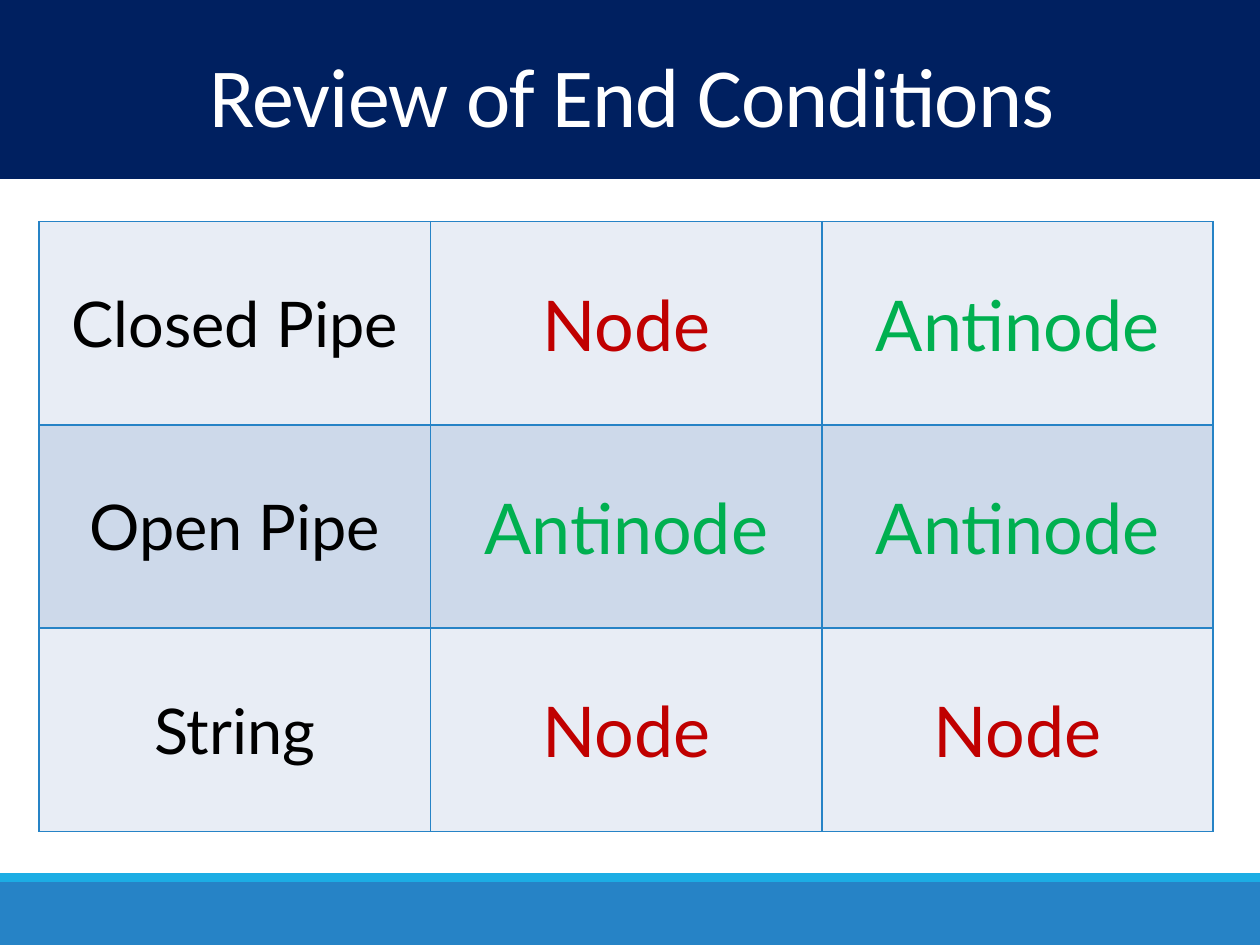
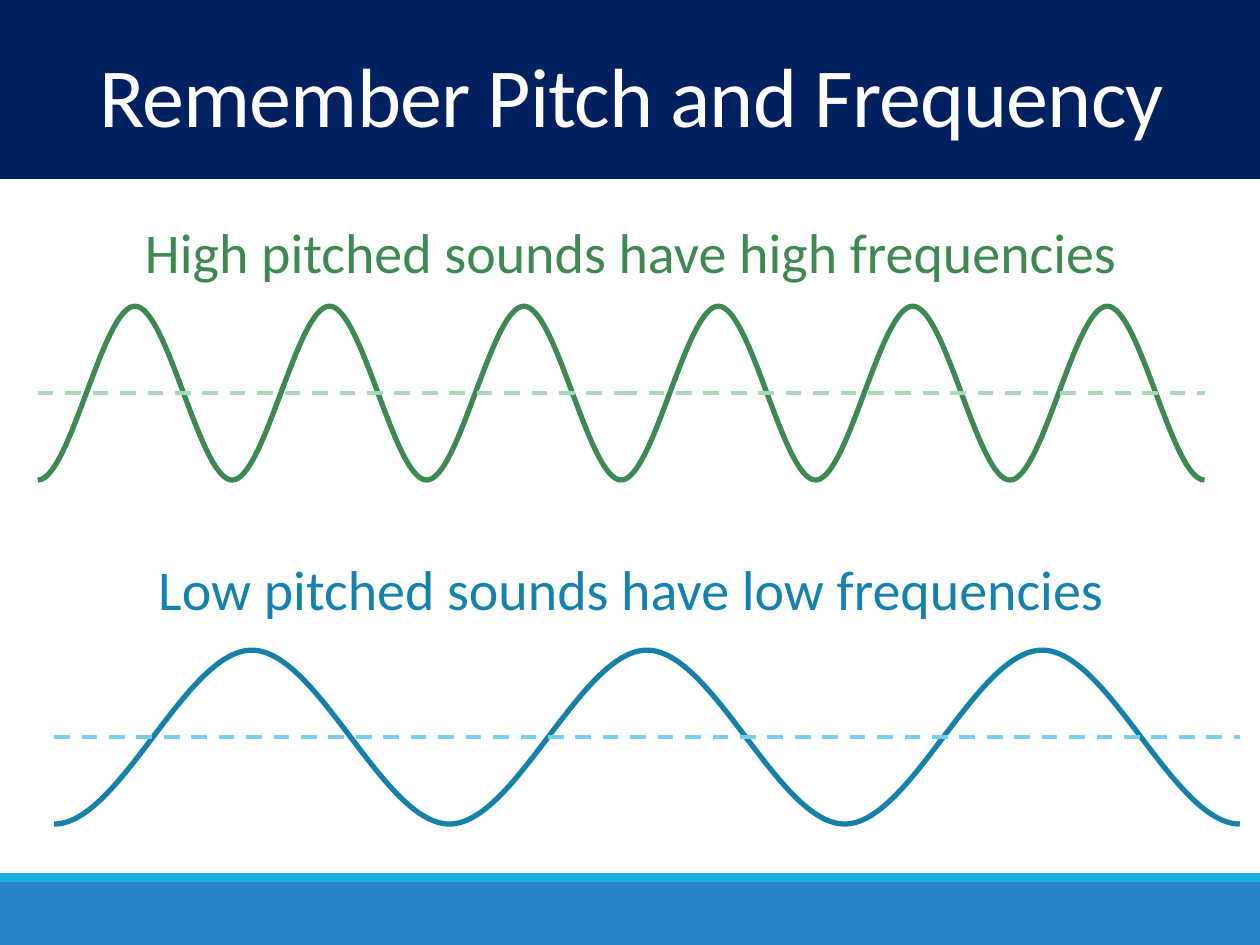
from lxml import etree
from pptx import Presentation
from pptx.dml.color import RGBColor
from pptx.enum.dml import MSO_LINE
from pptx.enum.shapes import MSO_CONNECTOR, MSO_SHAPE
from pptx.enum.text import MSO_ANCHOR, MSO_AUTO_SIZE, PP_ALIGN
from pptx.oxml.ns import qn
from pptx.util import Inches, Pt

RECT = MSO_SHAPE.RECTANGLE
STRAIGHT = MSO_CONNECTOR.STRAIGHT
DASH = MSO_LINE.DASH
CENTER = PP_ALIGN.CENTER
MIDDLE = MSO_ANCHOR.MIDDLE
FIT_SHAPE = MSO_AUTO_SIZE.SHAPE_TO_FIT_TEXT

WHITE = RGBColor(0xFF, 0xFF, 0xFF)
BLACK = RGBColor(0x00, 0x00, 0x00)
NAVY = RGBColor(0x00, 0x20, 0x60)
BLUE = RGBColor(0x26, 0x83, 0xC6)
SKY = RGBColor(0x1C, 0xAD, 0xE4)
ROW_FILLS = (RGBColor(0xE8, 0xED, 0xF5), RGBColor(0xCD, 0xD9, 0xEA))
RED = RGBColor(0xC0, 0x00, 0x00)
GREEN = RGBColor(0x00, 0xB0, 0x50)
HIGH = RGBColor(0x3E, 0x88, 0x53)
HIGH_AXIS = RGBColor(0xA9, 0xD8, 0xB7)
LOW_TEXT = RGBColor(0x14, 0x82, 0xAC)
LOW = RGBColor(0x15, 0x80, 0xA9)
LOW_AXIS = RGBColor(0x77, 0xCE, 0xEF)

SLIDE_W, SLIDE_H = 10, 7.5
TITLE_H, FOOTER_H, STRIPE_H = 1.42, 0.5, 0.07
HEADING, BODY = "Calibri", "Lato"

# Table grid
TABLE_X, TABLE_Y = 0.31, 1.76
COL_W, ROW_H = 9.32 / 3, 4.84 / 3
END_COLOURS = {"Node": RED, "Antinode": GREEN}
END_WIDTHS = {"Node": 1.57, "Antinode": 2.48}
END_H = 0.77
CONDITIONS = (
    ("Closed Pipe", "Node", "Antinode"),
    ("Open Pipe", "Antinode", "Antinode"),
    ("String", "Node", "Node"),
)

# Waves
AMPLITUDE = 0.69
HALF_CYCLES = 6


def style_text(tf, text, size, font, colour):
    tf.text = text
    p = tf.paragraphs[0]
    p.alignment = CENTER
    r = p.runs[0]
    r.font.size, r.font.name = Pt(size), font
    r.font.color.rgb = colour
    return p


def add_band(s, y, h, colour):
    sp = s.shapes.add_shape(RECT, 0, Inches(y), Inches(SLIDE_W), Inches(h))
    sp.shadow.inherit = False
    sp.fill.solid()
    sp.fill.fore_color.rgb = colour
    sp.line.fill.background()


def add_text(s, box, text, size, font, colour, wrap=True):
    sp = s.shapes.add_textbox(*map(Inches, box))
    tf = sp.text_frame
    tf.word_wrap = wrap
    return tf, style_text(tf, text, size, font, colour)


def add_slide(prs, title):
    """A blank slide with the shared bands and title."""
    s = prs.slides.add_slide(prs.slide_layouts[6])
    footer_y = SLIDE_H - FOOTER_H
    add_band(s, footer_y, FOOTER_H, BLUE)
    add_band(s, footer_y - STRIPE_H, STRIPE_H, SKY)
    add_band(s, 0, TITLE_H, NAVY)
    box = (0.03, 0.42, SLIDE_W - 0.03, 0.84)
    tf, p = add_text(s, box, title, 48, HEADING, WHITE)
    p.line_spacing = 0.85
    p.runs[0]._r.get_or_add_rPr().set("spc", "-50")
    return s


def set_borders(cell, colour):
    tcPr = cell._tc.get_or_add_tcPr()
    for i, side in enumerate(("a:lnL", "a:lnR", "a:lnT", "a:lnB")):
        ln = etree.Element(qn(side), w=str(Pt(1)))
        fill = etree.SubElement(ln, qn("a:solidFill"))
        etree.SubElement(fill, qn("a:srgbClr"), val=str(colour))
        tcPr.insert(i, ln)


def add_conditions_table(s):
    rows, cols = len(CONDITIONS), len(CONDITIONS[0])
    box = (TABLE_X, TABLE_Y, cols * COL_W, rows * ROW_H)
    table = s.shapes.add_table(rows, cols, *map(Inches, box)).table
    table.first_row = table.horz_banding = False
    for row, (name, *_) in enumerate(CONDITIONS):
        for col in range(cols):
            cell = table.cell(row, col)
            cell.fill.solid()
            cell.fill.fore_color.rgb = ROW_FILLS[row % 2]
            set_borders(cell, BLUE)
        label = table.cell(row, 0)
        label.vertical_anchor = MIDDLE
        style_text(label.text_frame, name, 36, BODY, BLACK)


def add_end_label(s, row, col, end):
    """An end condition centred over its table cell."""
    w = END_WIDTHS[end]
    x = TABLE_X + (col + 0.5) * COL_W - w / 2
    y = TABLE_Y + (row + 0.5) * ROW_H - END_H / 2
    tf, p = add_text(s, (x, y, w, END_H), end, 40, BODY, END_COLOURS[end],
                     wrap=False)
    tf.auto_size = FIT_SHAPE


def add_caption(s, y, text, colour):
    tf, p = add_text(s, (0.19, y, 9.64, 0.64), text, 32, HEADING, colour)
    tf.auto_size = FIT_SHAPE


def smooth_path(curve):
    """Turn each straight segment into a Bezier that is level at both ends."""
    start, *segments = list(curve._element.iter(qn("a:pt")))
    x0, y0 = int(start.get("x")), int(start.get("y"))
    for pt in segments:
        x1, y1 = int(pt.get("x")), int(pt.get("y"))
        third = (x1 - x0) // 3
        line = pt.getparent()
        bezier = etree.Element(qn("a:cubicBezTo"))
        for x, y in ((x0 + third, y0), (x1 - third, y1), (x1, y1)):
            etree.SubElement(bezier, qn("a:pt"), x=str(x), y=str(y))
        line.getparent().replace(line, bezier)
        x0, y0 = x1, y1


def add_wave(shapes, x, mid, w, colour, axis_colour):
    """A wave that starts at a trough, and its dashed axis."""
    turns = [(Inches(x + w * i / HALF_CYCLES),
              Inches(mid + AMPLITUDE * (-1) ** i))
             for i in range(HALF_CYCLES + 1)]
    builder = shapes.build_freeform(*turns[0])
    builder.add_line_segments(turns[1:], close=False)
    curve = builder.convert_to_shape()
    smooth_path(curve)
    curve.shadow.inherit = False
    curve.fill.background()
    curve.line.color.rgb, curve.line.width = colour, Pt(3)

    axis = shapes.add_connector(STRAIGHT, Inches(x), Inches(mid),
                                Inches(x + w), Inches(mid))
    axis.line.color.rgb, axis.line.width = axis_colour, Pt(2.25)
    axis.line.dash_style = DASH
    etree.SubElement(axis._element.spPr, qn("a:effectLst"))


def main():
    prs = Presentation()
    prs.slide_width, prs.slide_height = Inches(SLIDE_W), Inches(SLIDE_H)

    # End conditions
    s = add_slide(prs, "Review of End Conditions")
    add_conditions_table(s)
    for row, (_, *ends) in enumerate(CONDITIONS):
        for col, end in enumerate(ends, start=1):
            add_end_label(s, row, col, end)

    # Pitch and frequency
    s = add_slide(prs, "Remember Pitch and Frequency")
    add_caption(s, 4.35, "Low pitched sounds have low frequencies", LOW_TEXT)
    low_group = s.shapes.add_group_shape()
    add_wave(low_group.shapes, 0.43, 5.85, 9.41, LOW, LOW_AXIS)

    add_caption(s, 1.68, "High pitched sounds have high frequencies", HIGH)
    high_group = s.shapes.add_group_shape()
    half_w = 4.63
    for half in range(2):
        add_wave(high_group.shapes, 0.3 + half * half_w, 3.12, half_w,
                 HIGH, HIGH_AXIS)

    prs.save("out.pptx")


if __name__ == "__main__":
    main()
